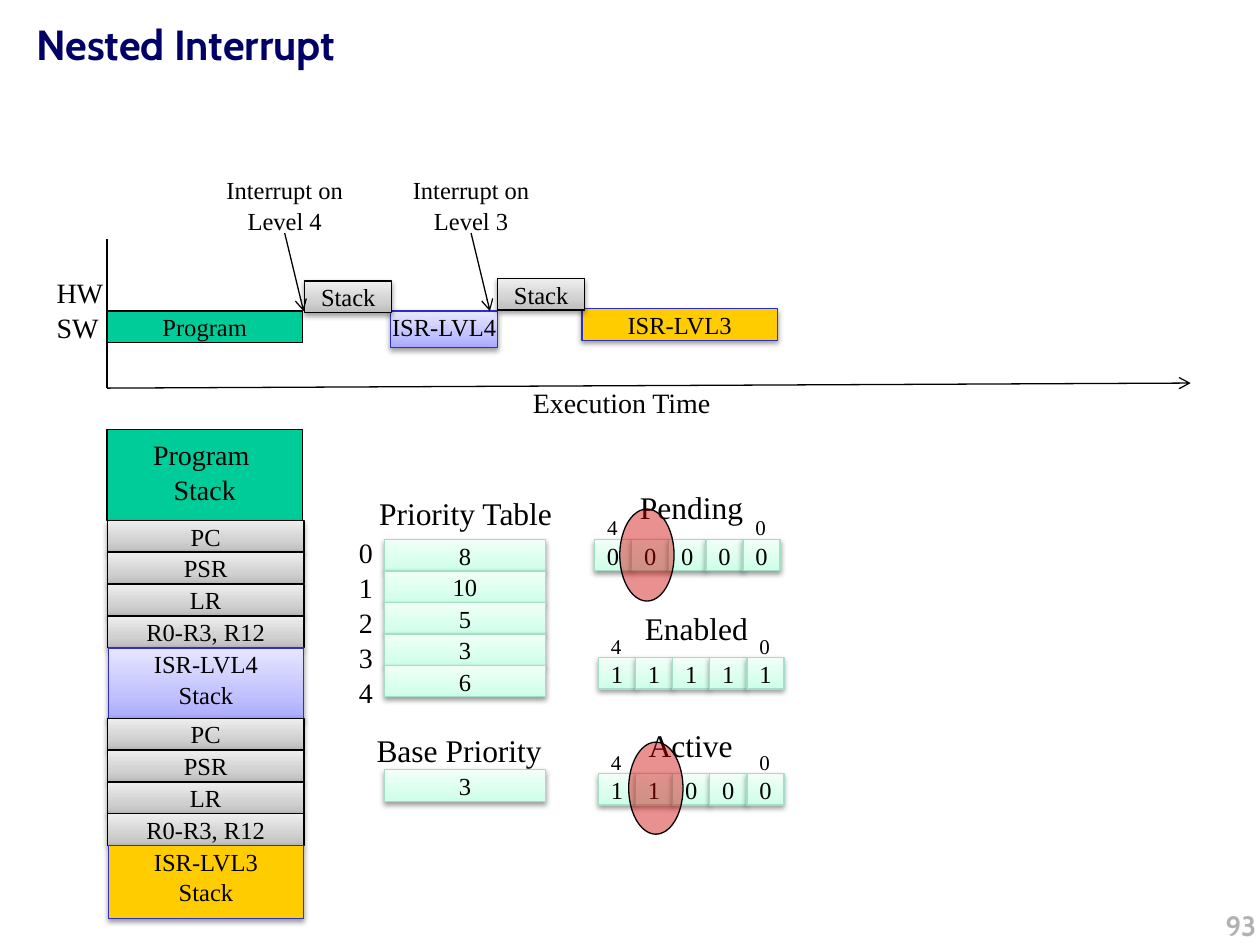
from copy import deepcopy

from lxml import etree
from pptx import Presentation
from pptx.dml.color import RGBColor
from pptx.enum import shapes, text
from pptx.oxml import ns
from pptx.util import Pt

SERIF = "Times New Roman"
BLACK, GREEN, YELLOW, BLUE_LINE = "000000", "00CC99", "FFCC00", "2E2ECB"
GREY = ("BDBDBD", "D1D1D1", "EEEEEE")
LILAC = ("A7A7FF", "C1C1FF", "E7E7FF")
MINT, MINT_LINE = ("CCFFE8", "DAFFEE", "F1FFF8"), "A5DEC6"
STOPS = (0, 0.35, 1)
ROW = 18
LEFT, CENTER, RIGHT = text.PP_ALIGN.LEFT, text.PP_ALIGN.CENTER, text.PP_ALIGN.RIGHT


def color(hex_string):
    return RGBColor.from_string(hex_string)


def sub(parent, tag, **attributes):
    return etree.SubElement(parent, ns.qn(tag), attributes)


def write(shape, content, size=14, font=SERIF, fill=BLACK, bold=False,
          align=LEFT, inset=True, wrap=True, grow=False):
    frame = shape.text_frame
    frame.word_wrap = wrap
    frame.vertical_anchor = text.MSO_ANCHOR.TOP
    if grow:
        frame.auto_size = text.MSO_AUTO_SIZE.SHAPE_TO_FIT_TEXT
    if not inset:
        frame.margin_left = frame.margin_right = 0
        frame.margin_top = frame.margin_bottom = 0
    for index, line in enumerate(content.split("\n")):
        paragraph = frame.add_paragraph() if index else frame.paragraphs[0]
        paragraph.alignment = align
        paragraph.line_spacing = 1.04
        run = paragraph.add_run()
        run.text = line
        run.font.size, run.font.name, run.font.bold = Pt(size), font, bold
        run.font.color.rgb = color(fill)


def add_label(slide, content, x, y, width, height, **text_format):
    box = slide.shapes.add_textbox(Pt(x), Pt(y), Pt(width), Pt(height))
    write(box, content, **text_format)


def paint(shape, fill):
    """Fill with one colour, or with a bottom-to-top gradient of three."""
    if isinstance(fill, str):
        shape.fill.solid()
        shape.fill.fore_color.rgb = color(fill)
        return
    shape.fill.gradient()
    shape.fill.gradient_angle = 90
    stop_list = shape._element.spPr.find(".//" + ns.qn("a:gsLst"))
    stop_list.insert(1, deepcopy(stop_list[0]))
    for stop, position, shade in zip(shape.fill.gradient_stops, STOPS, fill):
        stop.position = position
        stop.color.rgb = color(shade)


def add_shadow(shape):
    effects = shape._element.spPr.find(ns.qn("a:effectLst"))
    shadow = sub(effects, "a:outerShdw", blurRad=str(Pt(3.1)), dist=str(Pt(1.6)),
                 dir="5400000", rotWithShape="0")
    sub(sub(shadow, "a:srgbClr", val=BLACK), "a:alpha", val="38000")


def add_outlined(slide, kind, x, y, width, height, fill, line):
    shape = slide.shapes.add_shape(kind, Pt(x), Pt(y), Pt(width), Pt(height))
    shape.shadow.inherit = False
    paint(shape, fill)
    shape.line.color.rgb = color(line)
    shape.line.width = Pt(0.75)
    return shape


def add_block(slide, content, x, y, width, height=ROW, fill=GREY, line=BLACK,
              shadow=True, **text_format):
    block = add_outlined(slide, shapes.MSO_SHAPE.RECTANGLE, x, y, width, height, fill, line)
    if shadow:
        add_shadow(block)
    write(block, content, align=CENTER, **{"inset": False, **text_format})


def add_cell(slide, content, x, y, width):
    add_block(slide, content, x, y, width, fill=MINT, line=MINT_LINE)


def add_line(slide, x1, y1, x2, y2, arrow=True):
    line = slide.shapes.add_connector(
        shapes.MSO_CONNECTOR.STRAIGHT, Pt(x1), Pt(y1), Pt(x2), Pt(y2))
    line.line.color.rgb = color(BLACK)
    line.line.width = Pt(0.75)
    if arrow:
        sub(line.line._get_or_add_ln(), "a:tailEnd", type="arrow")
    sub(line._element.spPr, "a:effectLst")


def add_highlight(slide, x, y):
    ellipse = add_outlined(slide, shapes.MSO_SHAPE.OVAL, x, y, 31, 52.6, "CC0000", BLACK)
    fill = ellipse._element.spPr.find(ns.qn("a:solidFill"))
    sub(fill[0], "a:alpha", val="43000")


def add_register(slide, name, bits, x, y, name_x, name_y, name_width):
    """Draw a row of bits, numbered at both ends, under its name."""
    pitch = 21.2
    for index, bit in enumerate(bits):
        add_cell(slide, bit, x + index * pitch, y, pitch)
    last = len(bits) - 1
    for index in (0, last):
        add_label(slide, str(last - index), x + index * pitch, y - ROW, 21, 21.6,
                  size=12, wrap=False, grow=True)
    add_label(slide, name, name_x, name_y, name_width, 29, size=18, wrap=False, grow=True)


def add_interrupt(slide, level, x):
    add_label(slide, f"Interrupt on Level {level}", x, 95.8, 96.5, 41,
              align=CENTER, grow=True)
    add_line(slide, x + 48.2, 133.2, x + 59, 177.8)


def add_timeline(slide):
    add_block(slide, "Program", 61.2, 177.8, 111.6, fill=GREEN, shadow=False)
    add_block(slide, "ISR-LVL4", 223.2, 177.8, 61.2, 20.9, fill=LILAC, line=BLUE_LINE)
    add_block(slide, "ISR-LVL3", 332.6, 176.4, 111.6, fill=YELLOW, line=BLUE_LINE)
    add_block(slide, "Stack", 174.2, 160.6, 49.7)
    add_block(slide, "Stack", 284.4, 159.1, 49.7)
    add_interrupt(slide, 4, 114.5)
    add_interrupt(slide, 3, 221)
    add_line(slide, 61.2, 221.8, 680.4, 218.9)
    add_line(slide, 61.2, 221.8, 61.2, 136.8, arrow=False)
    add_label(slide, "Execution Time", 297.4, 216, 117.4, 26.6,
              size=16, wrap=False, grow=True)
    add_label(slide, "HW\nSW", 25.2, 153.4, 41.8, 46, size=16, wrap=False, grow=True)


def add_stack(slide):
    add_block(slide, "Program \nStack", 61.2, 245.5, 111.6, 51.8, fill=GREEN,
              shadow=False, size=16, inset=True)
    for level, top, fill in ((4, 297.4, LILAC), (3, 410.4, YELLOW)):
        for index, register in enumerate(("PC", "PSR", "LR", "R0-R3, R12")):
            add_block(slide, register, 61.4, top + index * 18.2, 112.3)
        add_block(slide, f"ISR-LVL{level}\nStack", 61.9, top + 4 * 18.2, 111.6, 41.8,
                  fill=fill, line=BLUE_LINE)


def add_priorities(slide):
    for index, priority in enumerate(("8", "10", "5", "3", "6")):
        add_cell(slide, priority, 219.6, 308.2 + index * ROW, 92.2)
    add_label(slide, "0\n1\n2\n3\n4", 198, 301.7, 22.3, 104.4,
              size=16, wrap=False, grow=True)
    add_label(slide, "Priority Table", 209.5, 277.9, 114.5, 29,
              size=18, wrap=False, grow=True)
    add_cell(slide, "3", 219.6, 439.9, 92.2)
    add_label(slide, "Base Priority", 208.1, 413.3, 110.2, 29,
              size=18, wrap=False, grow=True)


def main():
    presentation = Presentation()
    presentation.slide_width, presentation.slide_height = Pt(720), Pt(540)
    slide = presentation.slides.add_slide(presentation.slide_layouts[6])
    add_label(slide, "Nested Interrupt", 13.7, 5.8, 699, 72,
              size=24, font="Cabin", fill="000066", bold=True)
    add_label(slide, "93", 496.8, 514.8, 228.2, 36,
              size=16, font="Cabin", fill="B2B2B2", bold=True, align=RIGHT)
    add_timeline(slide)
    add_priorities(slide)
    add_register(slide, "Pending", "00000", 339.8, 308.2, 358.6, 274.3, 74.2)
    add_register(slide, "Enabled", "11111", 342, 375.8, 361.4, 343.4, 74.2)
    add_register(slide, "Active", "11000", 342, 442.1, 363.6, 410.4, 63.4)
    add_stack(slide)
    add_highlight(slide, 354.2, 290.9)
    add_highlight(slide, 359.3, 424.1)
    presentation.save("out.pptx")


if __name__ == "__main__":
    main()
